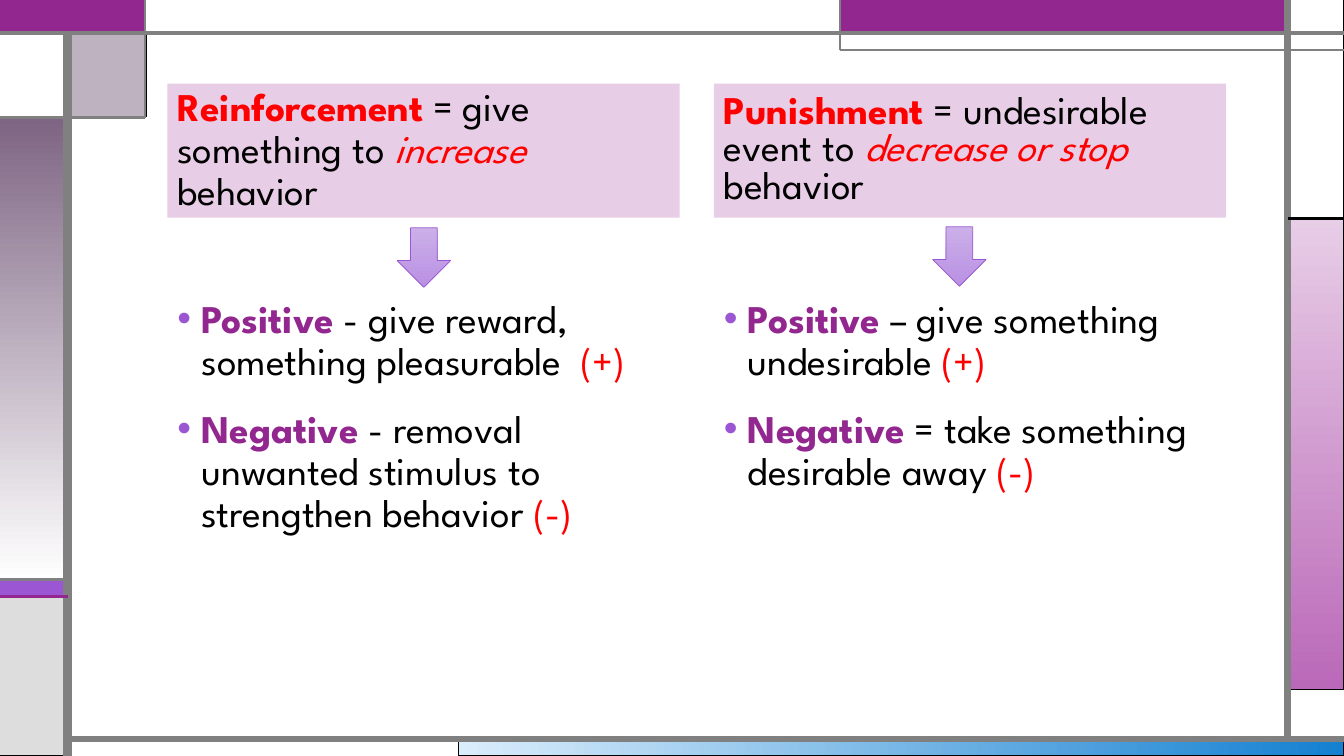
import lxml.etree
import pptx
import pptx.dml.color
import pptx.enum.shapes
import pptx.enum.text
import pptx.oxml.ns
import pptx.util

EMU_PER_PX = 9144  # 100 px to the inch
FONT = "League Spartan"
TEXT_SIZE = 28
COLUMN_WIDTH = 508

COLORS = {
    "white": "FFFFFF", "black": "000000", "gray": "808080", "silver": "DDDDDD",
    "purple": "92278F", "violet": "9B57D3", "indigo": "755DD9", "mauve": "7E6583",
    "pink": "E8CDE7", "orchid": "BA69B8", "pale blue": "DAEDFB", "blue": "1480D1",
    "lilac": "CBAFE8", "lavender": "B991E3", "red": "FF0000",
}

# left, top, width, height, fill (one colour, or two for a gradient), line, points
PANELS = [
    (455, 733, 878, 17, ("pale blue", "blue"), "black", 0.75),
    (1277, 217, 56, 467, ("pink", "orchid"), "black", 0.75),
    (0, 575, 67, 17, "violet", "black", 0.75),
    (0, 592, 67, 158, "silver", "black", 0.75),
    (1277, 0, 56, 217, "white", "black", 0.75),
    (833, 0, 444, 33, "purple", "indigo", 0.75),
    (67, 33, 78, 83, "mauve", "black", 0.75),
    (0, 117, 67, 458, ("mauve", "white"), "black", 0.75),
    (0, 33, 67, 83, "white", "black", 0.75),
    (0, 0, 144, 33, "purple", "purple", 1.5),
    (144, 0, 689, 33, "white", "gray", 0.75),
]

# start x, start y, end x, end y, colour, points
RULES = [
    (67, 750, 67, 33, "gray", 6),
    (67, 733, 1333, 733, "gray", 4.5),
    (1277, 733, 1277, 0, "gray", 4.5),
    (0, 33, 1333, 33, "gray", 3),
    (1333, 50, 833, 50, "gray", 1.5),
    (833, 50, 833, 0, "gray", 1.5),
    (1277, 217, 1333, 217, "black", 2.25),
    (144, 0, 144, 117, "gray", 1.5),
    (144, 117, 0, 117, "gray", 2.25),
    (67, 575, 0, 575, "gray", 2.25),
    (67, 592, 0, 592, "purple", 2.25),
]

# Each span is its text, colour and style
COLUMNS = [
    {
        "left": 166, "arrow": (394, 226), "spacing": 0.9,
        "heading": [("Reinforcement", "red", "bold"),
                    (" = give something to ", "black", ""),
                    ("increase ", "red", "italic"),
                    ("behavior", "black", "")],
        "points": [
            [("Positive", "purple", "bold"),
             (" - give reward, something pleasurable  ", "black", ""),
             ("(+)", "red", "")],
            [("Negative ", "purple", "bold"),
             ("- removal unwanted stimulus to strengthen behavior ", "black", ""),
             ("(-)", "red", "")],
        ],
    },
    {
        "left": 708, "arrow": (925, 225), "spacing": 0.8,
        "heading": [("Punishment ", "red", "bold"),
                    ("= undesirable event to ", "black", ""),
                    ("decrease or stop", "red", "italic"),
                    (" behavior", "black", "")],
        "points": [
            [("Positive", "purple", "bold"),
             (" – give something undesirable ", "black", ""),
             ("(+)", "red", "")],
            [("Negative", "purple", "bold"),
             (" = take something desirable away ", "black", ""),
             ("(-)", "red", "")],
        ],
    },
]


def px(*lengths):
    return [pptx.util.Emu(length * EMU_PER_PX) for length in lengths]


def rgb(name):
    return pptx.dml.color.RGBColor.from_string(COLORS[name])


def add_child(parent, tag, **attributes):
    return lxml.etree.SubElement(parent, pptx.oxml.ns.qn(tag), attributes)


def paint(shape, fill, angle=0):
    if isinstance(fill, str):
        shape.fill.solid()
        shape.fill.fore_color.rgb = rgb(fill)
        return
    shape.fill.gradient()
    shape.fill.gradient_angle = angle
    for stop, name in zip(shape.fill.gradient_stops, fill):
        stop.color.rgb = rgb(name)


def add_panel(slide, kind, bounds, fill, line=None, points=0):
    shape = slide.shapes.add_shape(kind, *px(*bounds))
    shape.shadow.inherit = False
    # Tall panels shade downwards, wide ones to the right
    paint(shape, fill, 270 if bounds[3] > bounds[2] else 0)
    if line:
        shape.line.color.rgb = rgb(line)
        shape.line.width = pptx.util.Pt(points)
    else:
        shape.line.fill.background()
    return shape


def make_half_transparent(shape):
    color = shape.fill._xPr.find(".//" + pptx.oxml.ns.qn("a:srgbClr"))
    add_child(color, "a:alpha", val="50000")


def add_rule(slide, ends, color, points):
    straight = pptx.enum.shapes.MSO_CONNECTOR.STRAIGHT
    rule = slide.shapes.add_connector(straight, *px(*ends))
    rule.line.color.rgb = rgb(color)
    rule.line.width = pptx.util.Pt(points)
    add_child(rule._element.spPr, "a:effectLst")


def add_spans(para, spans, spacing):
    para.alignment = pptx.enum.text.PP_ALIGN.LEFT
    para.line_spacing = spacing
    for text, color, style in spans:
        span = para.add_run()
        span.text = text
        span.font.name = FONT
        span.font.size = pptx.util.Pt(TEXT_SIZE)
        span.font.color.rgb = rgb(color)
        span.font.bold = style == "bold"
        span.font.italic = style == "italic"


def add_bullet(para):
    para.space_before = pptx.util.Pt(18)
    properties = para._p.get_or_add_pPr()
    indent = px(24)[0]
    properties.set("marL", str(indent))
    properties.set("indent", str(-indent))
    color = add_child(properties, "a:buClr")
    add_child(color, "a:srgbClr", val=COLORS["violet"])
    add_child(properties, "a:buFont", typeface="Arial")
    add_child(properties, "a:buChar", char="•")


def add_heading(slide, left, spans, spacing):
    rectangle = pptx.enum.shapes.MSO_SHAPE.RECTANGLE
    box = add_panel(slide, rectangle, (left, 83, COLUMN_WIDTH, 133), "pink")
    box.text_frame.word_wrap = True
    box.text_frame.vertical_anchor = pptx.enum.text.MSO_ANCHOR.MIDDLE
    add_spans(box.text_frame.paragraphs[0], spans, spacing)


def add_points(slide, left, points):
    box = slide.shapes.add_textbox(*px(left, 292, COLUMN_WIDTH, 367))
    frame = box.text_frame
    frame.word_wrap = True
    for index, spans in enumerate(points):
        para = frame.add_paragraph() if index else frame.paragraphs[0]
        add_spans(para, spans, 0.9)
        add_bullet(para)


def main():
    deck = pptx.Presentation()
    deck.slide_width, deck.slide_height = px(1333, 750)
    slide = deck.slides.add_slide(deck.slide_layouts[6])
    shapes = pptx.enum.shapes.MSO_SHAPE

    # Frame of coloured panels and rules
    for *bounds, fill, line, points in PANELS:
        panel = add_panel(slide, shapes.RECTANGLE, bounds, fill, line, points)
        if fill == "mauve":
            make_half_transparent(panel)
    for *ends, color, points in RULES:
        add_rule(slide, ends, color, points)

    # Two columns: heading, bullet points, arrow
    for column in COLUMNS:
        add_heading(slide, column["left"], column["heading"], column["spacing"])
        add_points(slide, column["left"], column["points"])
        add_panel(slide, shapes.DOWN_ARROW, (*column["arrow"], 53, 59),
                  ("lilac", "lavender"), "violet", 0.5)

    deck.save("out.pptx")


if __name__ == "__main__":
    main()
